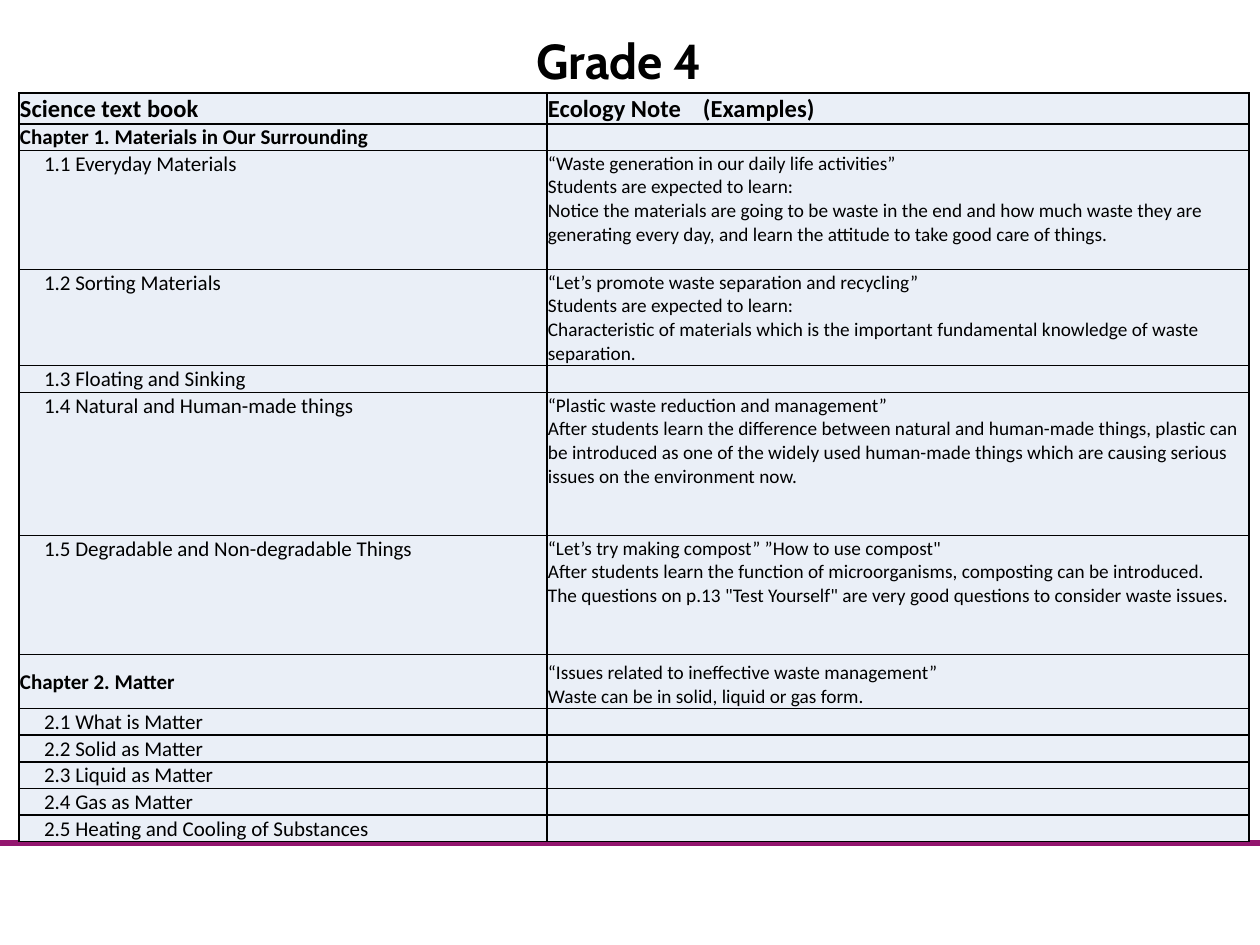
from lxml.etree import SubElement
from pptx import Presentation
from pptx.dml.color import RGBColor
from pptx.enum.shapes import MSO_CONNECTOR
from pptx.enum.text import MSO_ANCHOR as ANCHOR, PP_ALIGN as ALIGN
from pptx.oxml.ns import qn
from pptx.util import Pt

EMU_PER_PX = 914400 / 126
COLORS = {"text": "000000", "cell": "EAEFF7", "border": "000000", "rule": "93166F"}


def px(value):
    return round(value * EMU_PER_PX)


def format_text(paragraph, font_name, size, bold):
    for run in paragraph.runs:
        run.font.name = font_name
        run.font.size = Pt(size)
        run.font.bold = bold
        run.font.color.rgb = RGBColor.from_string(COLORS["text"])


rows = [
    (31, "Science text book", "Ecology Note\t(Examples)"),
    (26, "Chapter 1. Materials in Our Surrounding", ""),
    (119, "1.1 Everyday Materials",
     "“Waste generation in our daily life activities”\n"
     "Students are expected to learn:\n"
     "Notice the materials are going to be waste in the end and how much waste they are "
     "generating every day, and learn the attitude to take good care of things."),
    (96, "1.2 Sorting Materials",
     "“Let’s promote waste separation and recycling”\n"
     "Students are expected to learn:\n"
     "Characteristic of materials which is the important fundamental knowledge of waste separation."),
    (27, "1.3 Floating and Sinking", ""),
    (143, "1.4 Natural and Human-made things",
     "“Plastic waste reduction and management”\n"
     "After students learn the difference between natural and human-made things, plastic can be "
     "introduced as one of the widely used human-made things which are causing serious issues "
     "on the environment now."),
    (119, "1.5 Degradable and Non-degradable Things",
     "“Let’s try making compost” ”How to use compost\"\n"
     "After students learn the function of microorganisms, composting can be introduced.\n"
     "The questions on p.13 \"Test Yourself\" are very good questions to consider waste issues."),
    (54, "Chapter 2. Matter",
     "“Issues related to ineffective waste management”\n"
     "Waste can be in solid, liquid or gas form."),
    (26, "2.1 What is Matter", ""),
    (26, "2.2 Solid as Matter", ""),
    (26, "2.3 Liquid as Matter", ""),
    (26, "2.4 Gas as Matter", ""),
    (26, "2.5 Heating and Cooling of Substances", ""),
]
column_widths = [528, 702]

presentation = Presentation()
presentation.slide_width = px(1260)
presentation.slide_height = px(945)
slide = presentation.slides.add_slide(presentation.slide_layouts[6])

rule = slide.shapes.add_connector(MSO_CONNECTOR.STRAIGHT, 0, px(843), px(1260), px(843))
rule.line.color.rgb = RGBColor.from_string(COLORS["rule"])
rule.line.width = Pt(3)
SubElement(rule._element.spPr, qn("a:effectLst"))

table_height = sum(height for height, *_ in rows)
table = slide.shapes.add_table(
    len(rows), 2, px(19), px(93), px(sum(column_widths)), px(table_height)
).table
for column, width in zip(table.columns, column_widths):
    column.width = px(width)

for row_index, (height, *texts) in enumerate(rows):
    table.rows[row_index].height = px(height)
    is_header = row_index == 0
    is_chapter = texts[0].startswith("Chapter")
    for column_index, text in enumerate(texts):
        cell = table.cell(row_index, column_index)
        cell.margin_left = cell.margin_right = cell.margin_top = px(1)
        cell.margin_bottom = 0
        cell.vertical_anchor = ANCHOR.TOP
        if is_chapter:
            cell.vertical_anchor = ANCHOR.BOTTOM if column_index else ANCHOR.MIDDLE
        cell.text_frame.text = text
        size = 14 if is_header else 11 if column_index else 12
        bold = is_header or (is_chapter and column_index == 0)
        for paragraph in cell.text_frame.paragraphs:
            properties = paragraph._p.get_or_add_pPr()
            if column_index == 0 and not is_header and not is_chapter:
                properties.set("marL", str(px(24)))
            if "\t" in text:
                tabs = SubElement(properties, qn("a:tabLst"))
                SubElement(tabs, qn("a:tab"), pos=str(px(155)), algn="l")
            format_text(paragraph, "Calibri", size, bold)
            if not text:
                SubElement(paragraph._p, qn("a:endParaRPr"), sz=str(size * 100))
        cell_properties = cell._tc.get_or_add_tcPr()
        for side in ("lnL", "lnR", "lnT", "lnB"):
            border = SubElement(cell_properties, qn(f"a:{side}"), w=str(Pt(1)))
            border_fill = SubElement(border, qn("a:solidFill"))
            SubElement(border_fill, qn("a:srgbClr"), val=COLORS["border"])
        cell.fill.solid()
        cell.fill.fore_color.rgb = RGBColor.from_string(COLORS["cell"])

title = slide.shapes.add_textbox(0, px(24), px(1250), px(72))
title.text_frame.word_wrap = True
title.text_frame.text = "Grade 4 "
paragraph = title.text_frame.paragraphs[0]
paragraph.alignment = ALIGN.CENTER
format_text(paragraph, "Cabin", 28, True)

presentation.save("out.pptx")
